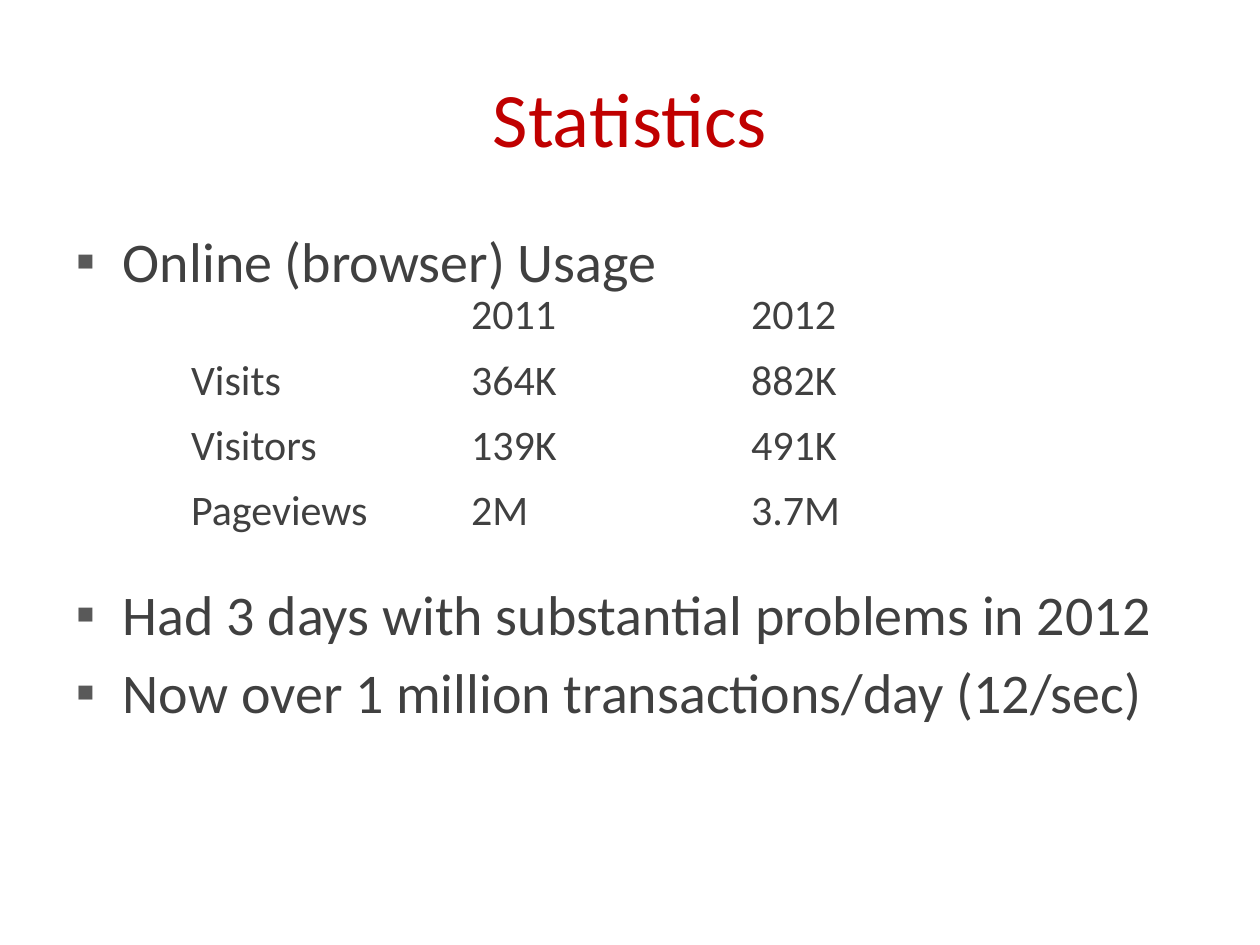
from lxml.etree import SubElement
from pptx import Presentation
from pptx.dml.color import RGBColor
from pptx.enum.text import MSO_ANCHOR as Anchor, PP_ALIGN as Align
from pptx.oxml.ns import qn
from pptx.util import Pt

RED = RGBColor(0xC0, 0x00, 0x00)
DARK = RGBColor(0x40, 0x40, 0x40)
BULLET_GRAY = RGBColor(0x59, 0x59, 0x59)

TITLE_FONT = {"name": "Calibri", "size": Pt(44), "bold": False}
BODY_FONT = {"name": "Calibri", "size": Pt(32), "bold": False}
TABLE_FONT = {"name": "Calibri", "size": Pt(24), "bold": False}
NO_GRID_STYLE = "{2D5ABB26-0587-4C30-8999-92F81FD0307C}"

BULLETS = [
    ("Online (browser) Usage", 6.4),
    ("Had 3 days with substantial problems in 2012", 163),
    ("Now over 1 million transactions/day (12/sec)", 6.4),
]
USAGE = [
    ("", "2011", "2012"),
    ("Visits", "364K", "882K"),
    ("Visitors", "139K", "491K"),
    ("Pageviews", "2M", "3.7M"),
    ("", "", ""),
]
ROW_HEIGHTS = [37.4] * 4 + [30.4]


def apply(target, values):
    """Set every attribute named in a dict."""
    for name, value in values.items():
        setattr(target, name, value)


def place(shape, left, top, width, height):
    """Move and size a shape, in points."""
    apply(shape, {"left": Pt(left), "top": Pt(top), "width": Pt(width), "height": Pt(height)})


def write(paragraph, text, font, color):
    """Put one formatted run into a paragraph."""
    run = paragraph.add_run()
    run.text = text
    apply(run.font, font)
    run.font.color.rgb = color


def set_bullet(paragraph):
    """Give a paragraph a hanging gray square bullet."""
    properties = paragraph._p.get_or_add_pPr()
    properties.set("marL", str(Pt(27)))
    properties.set("indent", str(-Pt(27)))
    color = SubElement(properties, qn("a:buClr"))
    SubElement(color, qn("a:srgbClr"), val=str(BULLET_GRAY))
    SubElement(properties, qn("a:buFont"), typeface="Arial")
    SubElement(properties, qn("a:buChar"), char="▪")


def add_title(slide, text):
    """Fill the title placeholder."""
    title = slide.shapes.title
    place(title, 36, 21.6, 648, 90)
    title.text_frame.vertical_anchor = Anchor.MIDDLE
    paragraph = title.text_frame.paragraphs[0]
    paragraph.alignment = Align.CENTER
    write(paragraph, text, TITLE_FONT, RED)


def add_bullets(slide, bullets):
    """Fill the body placeholder with bulleted lines."""
    body = slide.placeholders[1]
    place(body, 36, 126, 648, 356.4)
    frame = body.text_frame
    for index, (text, space) in enumerate(bullets):
        paragraph = frame.add_paragraph() if index else frame.paragraphs[0]
        paragraph.space_before = Pt(space)
        set_bullet(paragraph)
        write(paragraph, text, BODY_FONT, DARK)


def add_usage_table(slide, rows, heights):
    """Add the usage table without fill or grid, so the bullets show through."""
    frame = slide.shapes.add_table(
        len(rows), len(rows[0]), Pt(102), Pt(162), Pt(480), Pt(sum(heights)))
    table = frame.table
    apply(table, {"first_row": False, "horz_banding": False})
    table._tbl.tblPr.find(qn("a:tableStyleId")).text = NO_GRID_STYLE
    for row, height, texts in zip(table.rows, heights, rows):
        row.height = Pt(height)
        for cell, text in zip(row.cells, texts):
            cell.fill.background()
            if text:
                write(cell.text_frame.paragraphs[0], text, TABLE_FONT, DARK)


def main():
    """Build and save the statistics slide."""
    presentation = Presentation()
    apply(presentation, {"slide_width": Pt(720), "slide_height": Pt(540)})
    slide = presentation.slides.add_slide(presentation.slide_layouts[1])
    add_title(slide, "Statistics")
    add_bullets(slide, BULLETS)
    add_usage_table(slide, USAGE, ROW_HEIGHTS)
    presentation.save("out.pptx")


if __name__ == "__main__":
    main()
